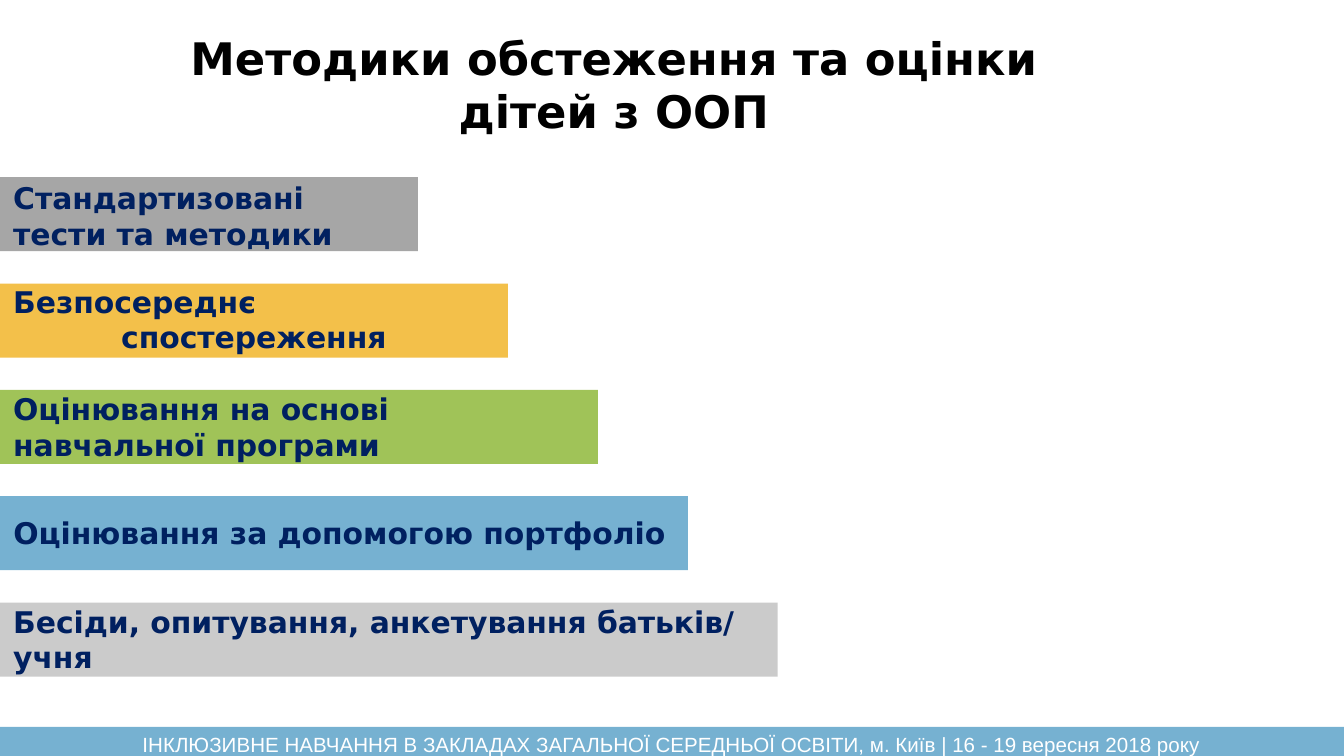
from pptx import Presentation
from pptx.dml.color import RGBColor
from pptx.enum import shapes, text
from pptx.util import Cm, Pt

BLACK = RGBColor(0x00, 0x00, 0x00)
WHITE = RGBColor(0xFF, 0xFF, 0xFF)
NAVY = RGBColor(0x00, 0x20, 0x60)
GRAY = RGBColor(0xA6, 0xA6, 0xA6)
AMBER = RGBColor(0xF3, 0xC0, 0x4A)
GREEN = RGBColor(0xA0, 0xC3, 0x58)
BLUE = RGBColor(0x76, 0xB1, 0xD1)
SILVER = RGBColor(0xCB, 0xCB, 0xCB)
LEFT, CENTER = text.PP_ALIGN.LEFT, text.PP_ALIGN.CENTER

deck = Presentation()
deck.slide_width, deck.slide_height = Cm(25.4), Cm(14.29)
page = deck.slides.add_slide(deck.slide_layouts[5])


def add_bar(left, top, width, height, color):
    bar = page.shapes.add_shape(
        shapes.MSO_SHAPE.RECTANGLE, Cm(left), Cm(top), Cm(width), Cm(height))
    bar.shadow.inherit = False
    bar.fill.solid()
    bar.fill.fore_color.rgb = color
    bar.line.fill.background()
    return bar


def write(box, words, aligns, size, color, font="DejaVu Sans", bold=True):
    frame = box.text_frame
    frame.word_wrap = True
    frame.text = words
    for para, align in zip(frame.paragraphs, aligns):
        para.alignment = align
        for span in para.runs:
            span.font.name = font
            span.font.size = Pt(size)
            span.font.bold = bold
            span.font.color.rgb = color


title = page.shapes.title
title.left, title.top, title.width, title.height = Cm(3.3), Cm(0.51), Cm(16.6), Cm(2.16)
write(title, "Методики обстеження та оцінки дітей з ООП", [CENTER], 24, BLACK)
title.text_frame.vertical_anchor = text.MSO_ANCHOR.MIDDLE

bars = [add_bar(0, 3.35 + 2.01 * row, 7.9 + 1.7 * row, 1.4, color)
        for row, color in enumerate([GRAY, AMBER, GREEN, BLUE, SILVER])]

write(bars[2], "Оцінювання на основі навчальної програми", [LEFT], 16, NAVY)
bars[2].text_frame.vertical_anchor = text.MSO_ANCHOR.MIDDLE

captions = [
    (0, 3.28, 7.9, 1.62, "Стандартизовані тести та методики", [LEFT]),
    (0, 5.23, 9.6, 1.62, "Безпосереднє\nспостереження", [LEFT, CENTER]),
    (-0.13, 9.6, 13.1, 0.94, "Оцінювання за допомогою портфоліо", [CENTER]),
    (0, 11.28, 15.5, 1.62, "Бесіди, опитування, анкетування батьків/\nучня", [LEFT, LEFT]),
]
for left, top, width, height, words, aligns in captions:
    caption = page.shapes.add_textbox(Cm(left), Cm(top), Cm(width), Cm(height))
    write(caption, words, aligns, 16, NAVY)

add_bar(0, 13.74, 25.4, 0.58, BLUE)
footer = page.shapes.add_textbox(Cm(0), Cm(13.64), Cm(25.4), Cm(0.76))
write(footer, "ІНКЛЮЗИВНЕ НАВЧАННЯ В ЗАКЛАДАХ ЗАГАЛЬНОЇ СЕРЕДНЬОЇ ОСВІТИ, "
      "м. Київ | 16 - 19 вересня 2018 року", [CENTER], 11, WHITE, "Arial", False)
footer.text_frame.paragraphs[0].line_spacing = 1.15
footer.text_frame.paragraphs[0].space_after = Pt(10)

deck.save("out.pptx")
